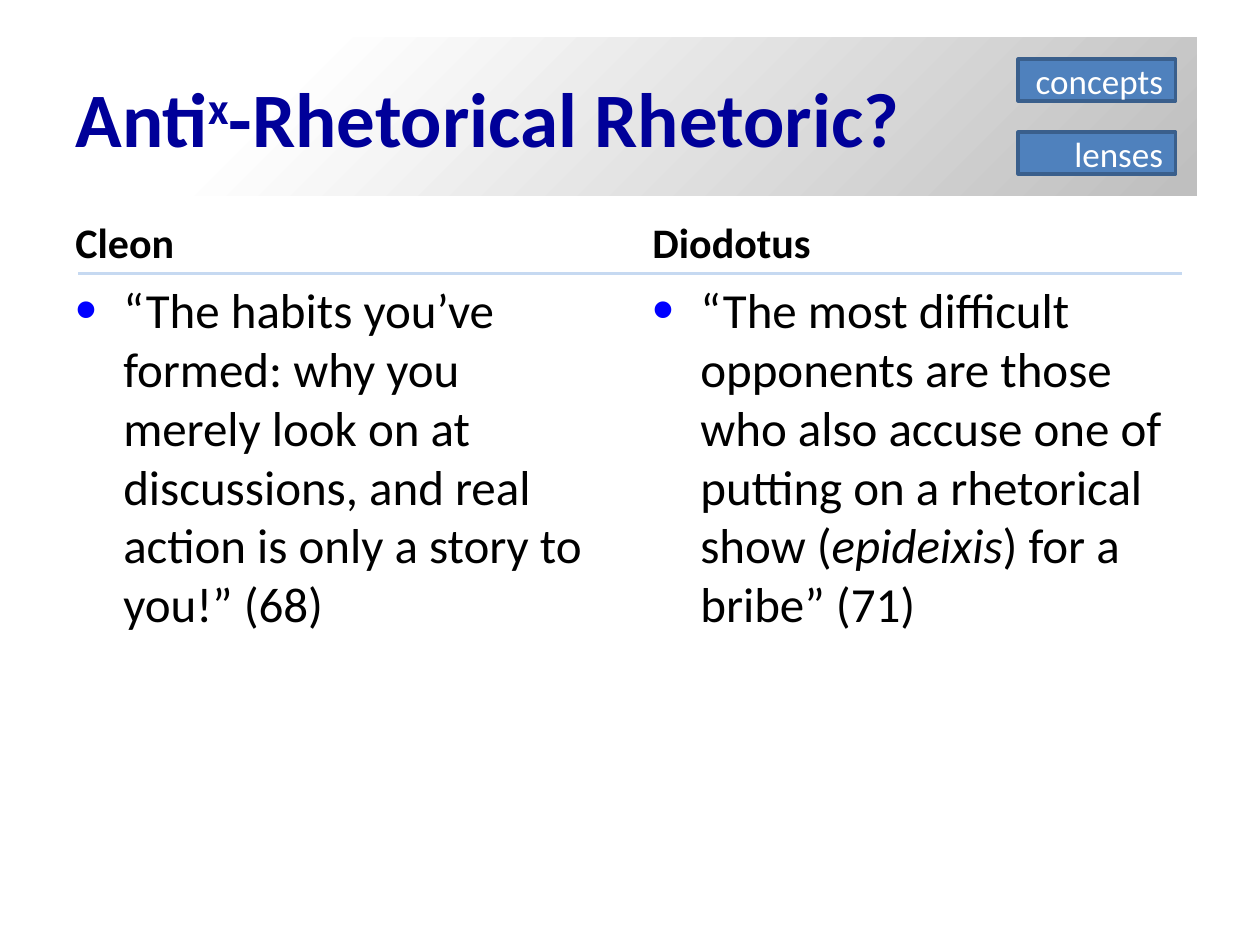
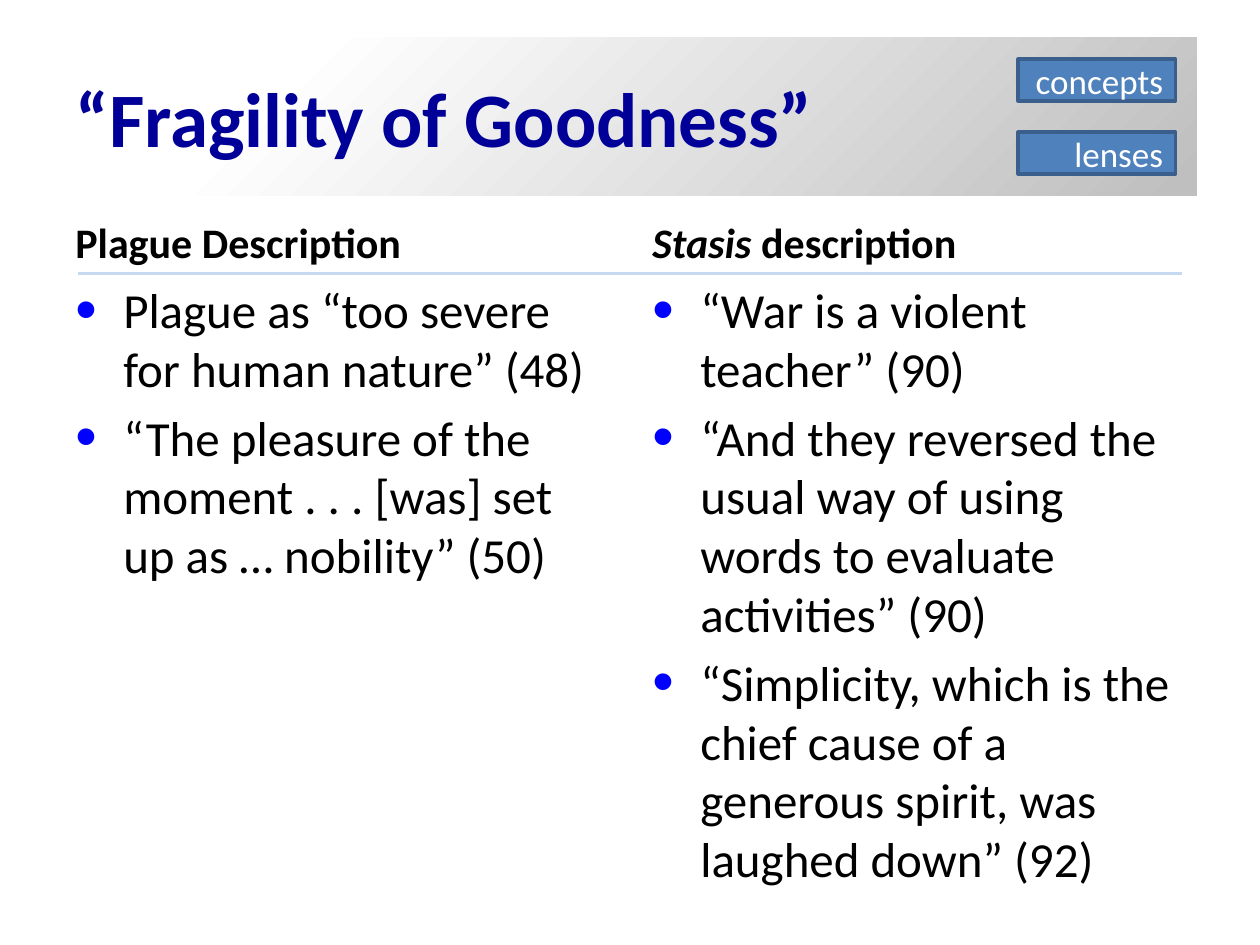
from dataclasses import dataclass

from lxml import etree
from pptx import Presentation
from pptx.dml.color import RGBColor
from pptx.enum.shapes import MSO_CONNECTOR, MSO_SHAPE
from pptx.enum.text import MSO_ANCHOR, MSO_AUTO_SIZE, PP_ALIGN
from pptx.oxml.ns import qn
from pptx.slide import Slide
from pptx.text.text import _Paragraph
from pptx.util import Inches, Pt

STRAIGHT = MSO_CONNECTOR.STRAIGHT
BUTTON = MSO_SHAPE.ACTION_BUTTON_CUSTOM
TOP, MIDDLE, BOTTOM = MSO_ANCHOR.TOP, MSO_ANCHOR.MIDDLE, MSO_ANCHOR.BOTTOM
LEFT, RIGHT = PP_ALIGN.LEFT, PP_ALIGN.RIGHT
NO_AUTOFIT = MSO_AUTO_SIZE.NONE

FONT = "Calibri"
NAVY, BLACK, WHITE = "000099", "000000", "FFFFFF"
BAND_GREY, RULE_BLUE, BULLET_BLUE = "BFBFBF", "C6D9F1", "0000FF"
BUTTON_FILL, BUTTON_LINE = "4F81BD", "3A5F8C"

COLUMN_LEFTS = (0.5, 5.08)
COLUMN_WIDTH = 4.42
HEADING_TOP, RULE_TOP, BODY_BOTTOM = 1.68, 2.17, 6.7
BUTTONS = ("concepts", "lenses")
BUTTON_TOP, BUTTON_STEP = 0.47, 0.58


@dataclass(frozen=True)
class Span:
    text: str
    italic: bool = False
    superscript: bool = False


Spans = tuple[Span, ...]


@dataclass(frozen=True)
class Column:
    heading: Spans
    bullets: tuple[Spans, ...]


@dataclass(frozen=True)
class Comparison:
    title: Spans
    columns: tuple[Column, Column]


def plain(text: str) -> Spans:
    return (Span(text),)


COMPARISONS = (
    Comparison(
        (Span("Anti"), Span("x", superscript=True), Span("-Rhetorical Rhetoric?")),
        (
            Column(plain("Cleon"), (
                plain("“The habits you’ve formed: why you merely look on at "
                      "discussions, and real action is only a story to you!” (68)"),
            )),
            Column(plain("Diodotus"), (
                (Span("“The most difficult opponents are those who also accuse "
                      "one of putting on a rhetorical show ("),
                 Span("epideixis", italic=True),
                 Span(") for a bribe” (71)")),
            )),
        ),
    ),
    Comparison(
        plain("“Fragility of Goodness”"),
        (
            Column(plain("Plague Description"), (
                plain("Plague as “too severe for human nature” (48)"),
                plain("“The pleasure of the moment . . . [was] set up as … "
                      "nobility” (50)"),
            )),
            Column((Span("Stasis", italic=True), Span(" description")), (
                plain("“War is a violent teacher” (90)"),
                plain("“And they reversed the usual way of using words to "
                      "evaluate activities” (90)"),
                plain("“Simplicity, which is the chief cause of a generous "
                      "spirit, was laughed down” (92)"),
            )),
        ),
    ),
)


def rgb(color: str) -> RGBColor:
    return RGBColor.from_string(color)


def write(p: _Paragraph, spans: Spans, size: float, color: str,
          bold: bool = False, align: PP_ALIGN = LEFT) -> None:
    p.alignment = align
    p.font.name, p.font.size, p.font.bold = FONT, Pt(size), bold
    p.font.color.rgb = rgb(color)
    for span in spans:
        r = p.add_run()
        r.text = span.text
        if span.italic:
            r.font.italic = True
        if span.superscript:
            r.font._element.set("baseline", "30000")


def add_bullet(p: _Paragraph) -> None:
    pPr = p._p.get_or_add_pPr()
    pPr.set("marL", str(Inches(0.38)))
    pPr.set("indent", str(Inches(-0.38)))
    color = etree.Element(qn("a:buClr"))
    etree.SubElement(color, qn("a:srgbClr"), val=BULLET_BLUE)
    marks = (
        color,
        etree.Element(qn("a:buSzPct"), val="125000"),
        etree.Element(qn("a:buFont"), typeface="Arial"),
        etree.Element(qn("a:buChar"), char="•"),
    )
    defaults = pPr.find(qn("a:defRPr"))
    for mark in marks:
        defaults.addprevious(mark)


def add_text(s: Slide, left: float, top: float, bottom: float,
             paragraphs: tuple[Spans, ...], size: float, anchor: MSO_ANCHOR,
             bold: bool = False, bulleted: bool = False) -> None:
    box = s.shapes.add_textbox(Inches(left), Inches(top),
                               Inches(COLUMN_WIDTH), Inches(bottom - top))
    tf = box.text_frame
    tf.word_wrap, tf.vertical_anchor = True, anchor
    for i, spans in enumerate(paragraphs):
        p = tf.add_paragraph() if i else tf.paragraphs[0]
        write(p, spans, size, BLACK, bold)
        p.space_before = Pt(size * 0.2)
        if bulleted:
            add_bullet(p)


def add_title(s: Slide, spans: Spans) -> None:
    title = s.shapes.title
    title.left, title.top = Inches(0.5), Inches(0.3)
    title.width, title.height = Inches(9), Inches(1.25)
    title.fill.gradient()
    title.fill.gradient_angle = 315
    stops = ((0.2, WHITE), (0.99, BAND_GREY))
    for stop, (position, color) in zip(title.fill.gradient_stops, stops):
        stop.position, stop.color.rgb = position, rgb(color)
    tf = title.text_frame
    tf.auto_size, tf.word_wrap, tf.vertical_anchor = NO_AUTOFIT, True, MIDDLE
    write(tf.paragraphs[0], spans, 44, NAVY, bold=True)


def add_rule(s: Slide) -> None:
    rule = s.shapes.add_connector(STRAIGHT, Inches(0.62), Inches(RULE_TOP),
                                  Inches(9.38), Inches(RULE_TOP))
    rule.line.color.rgb, rule.line.width = rgb(RULE_BLUE), Pt(2)
    etree.SubElement(rule._element.spPr, qn("a:effectLst"))


def add_button(s: Slide, label: str, top: float) -> None:
    button = s.shapes.add_shape(BUTTON, Inches(8.08), Inches(top),
                                Inches(1.25), Inches(0.33))
    button.shadow.inherit = False
    button.fill.solid()
    button.fill.fore_color.rgb = rgb(BUTTON_FILL)
    button.line.color.rgb, button.line.width = rgb(BUTTON_LINE), Pt(2)
    tf = button.text_frame
    tf.vertical_anchor = MIDDLE
    write(tf.paragraphs[0], plain(label), 20, WHITE, align=RIGHT)


def add_comparison(prs: Presentation, comparison: Comparison) -> None:
    s = prs.slides.add_slide(prs.slide_layouts.get_by_name("Title Only"))
    add_rule(s)
    add_title(s, comparison.title)
    for left, column in zip(COLUMN_LEFTS, comparison.columns):
        add_text(s, left, HEADING_TOP, RULE_TOP, (column.heading,), 24, BOTTOM,
                 bold=True)
        add_text(s, left, RULE_TOP, BODY_BOTTOM, column.bullets, 28, TOP,
                 bulleted=True)
    for i, label in enumerate(BUTTONS):
        add_button(s, label, BUTTON_TOP + i * BUTTON_STEP)


def main() -> None:
    prs = Presentation()
    prs.slide_width, prs.slide_height = Inches(10), Inches(7.5)
    for comparison in COMPARISONS:
        add_comparison(prs, comparison)
    prs.save("out.pptx")


if __name__ == "__main__":
    main()
